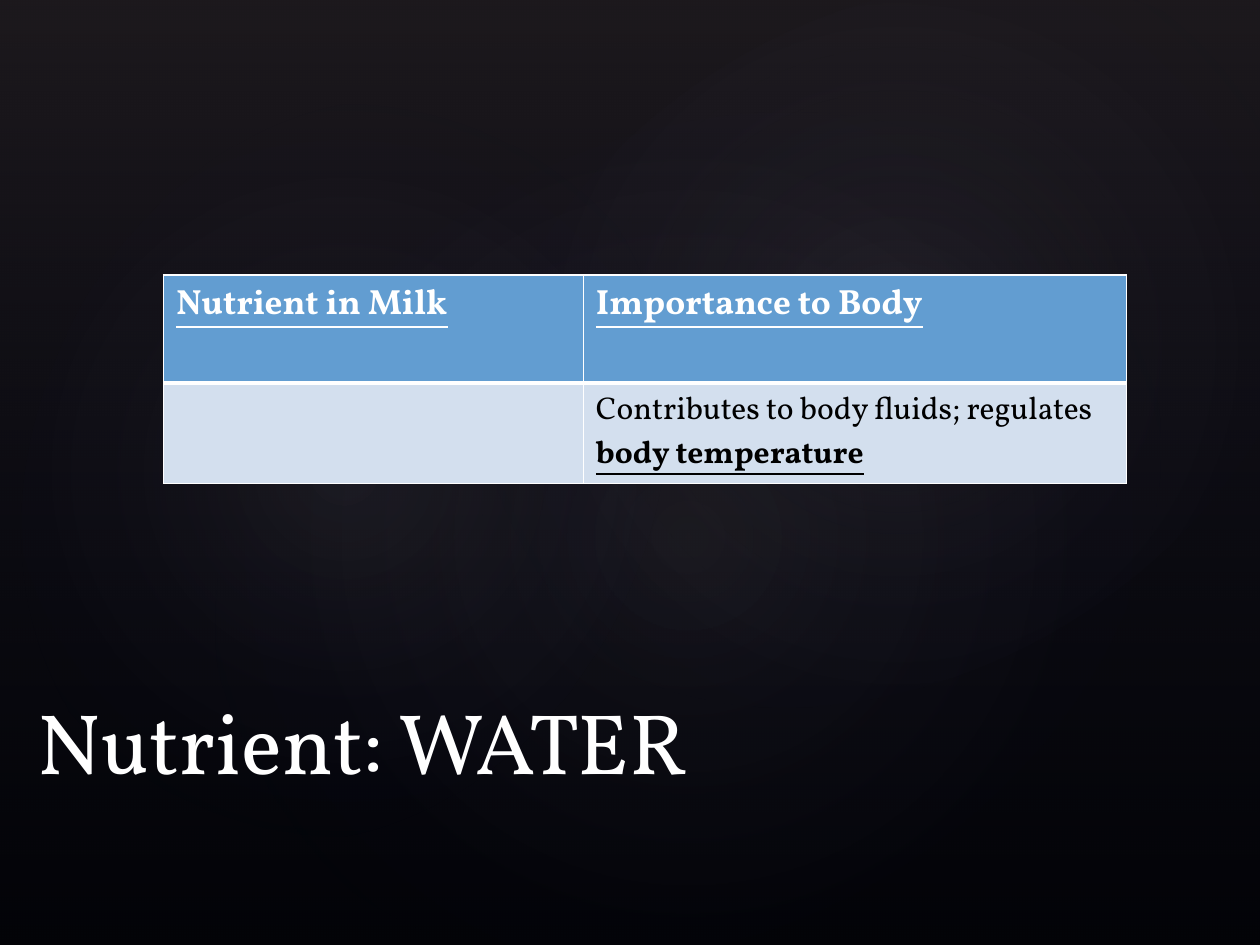
from lxml import etree
from pptx import Presentation
from pptx.dml.color import RGBColor
from pptx.enum.shapes import MSO_SHAPE
from pptx.enum.text import MSO_ANCHOR, MSO_AUTO_SIZE, PP_ALIGN
from pptx.oxml.ns import qn
from pptx.util import Cm, Pt

RECT, OVAL = MSO_SHAPE.RECTANGLE, MSO_SHAPE.OVAL
LEFT, BOTTOM, NO_FIT = PP_ALIGN.LEFT, MSO_ANCHOR.BOTTOM, MSO_AUTO_SIZE.NONE
FONT = "Vollkorn"
BLACK = RGBColor(0x00, 0x00, 0x00)
WHITE = RGBColor(0xFF, 0xFF, 0xFF)
BLUE = RGBColor(0x62, 0x9D, 0xD1)
PALE = RGBColor(0xD3, 0xDF, 0xEE)
NAVY = RGBColor(0x24, 0x28, 0x52)
PLUM = RGBColor(0x50, 0x46, 0x52)
MIST = RGBColor(0xC4, 0xBC, 0xC6)


def add_node(parent, tag, **attrs):
    return etree.SubElement(parent, qn(tag), {k: str(v) for k, v in attrs.items()})


def add_run(para, text, size, color, bold=False, line=False):
    run = para.add_run()
    run.text = text
    font = run.font
    font.name, font.size = FONT, Pt(size)
    font.bold, font.underline = bold, line
    font.color.rgb = color


def add_glow(slide, kind, box, stops, turn=0):
    """Add a see-through gradient; stops are (place %, colour, opacity %)."""
    shape = slide.shapes.add_shape(kind, *[Cm(v) for v in box])
    shape.shadow.inherit = False
    shape.rotation = turn
    shape.line.fill.background()
    shape.fill.gradient()
    grad = shape.fill._xPr.find(qn("a:gradFill"))
    for child in list(grad):
        grad.remove(child)
    grad.set("rotWithShape", "1")
    steps = add_node(grad, "a:gsLst")
    for place, color, alpha in stops:
        stop = add_node(steps, "a:gs", pos=place * 1000)
        tint = add_node(stop, "a:srgbClr", val=color)
        add_node(tint, "a:alpha", val=alpha * 1000)
    if kind == OVAL:
        ring = add_node(grad, "a:path", path="circle")
        add_node(ring, "a:fillToRect", l=50000, t=50000, r=50000, b=50000)
    else:
        add_node(grad, "a:lin", ang=5400000, scaled=0)


def add_backdrop(slide, wide, high):
    fill = slide.background.fill
    fill.solid()
    fill.fore_color.rgb = BLACK
    add_glow(slide, RECT, (0, 0, wide, high), [(0, PLUM, 36), (100, NAVY, 10)])
    # Soft round lights: box, turn, opacity
    lights = [
        ((3.81, 2.9, 20.12, 15.85), 328.7, 7),
        ((-0.76, 3.25, 15.39, 12.45), 294.3, 8),
        ((9.09, 0.33, 18.01, 13.21), 328.7, 8),
    ]
    for box, turn, alpha in lights:
        add_glow(slide, OVAL, box, [(0, MIST, alpha), (58, NAVY, 0)], turn)


def set_title(slide, text, box):
    title = slide.shapes.title
    title.left, title.top, title.width, title.height = [Cm(v) for v in box]
    frame = title.text_frame
    frame.auto_size, frame.vertical_anchor = NO_FIT, BOTTOM
    para = frame.paragraphs[0]
    para.alignment = LEFT
    add_run(para, text, 49, WHITE)
    # Bring the title in front of the backdrop
    slide.shapes._spTree.append(title._element)


def style_cell(cell, fill, base):
    props = cell._tc.get_or_add_tcPr()
    for side, width in (("L", 1), ("R", 1), ("T", 1), ("B", base)):
        line = add_node(props, "a:ln" + side, w=Pt(width))
        add_node(add_node(line, "a:solidFill"), "a:srgbClr", val=WHITE)
    cell.fill.solid()
    cell.fill.fore_color.rgb = fill


def add_grid(slide, box, cols, rows):
    table = slide.shapes.add_table(2, 2, *[Cm(v) for v in box]).table
    for col, width in zip(table.columns, cols):
        col.width = Cm(width)
    for row, height in zip(table.rows, rows):
        row.height = Cm(height)
    # Header row
    for cell, text in zip(table.rows[0].cells, ("Nutrient in Milk", "Importance to Body")):
        style_cell(cell, BLUE, 3)
        add_run(cell.text_frame.paragraphs[0], text, 20, WHITE, True, True)
    # Body row
    for cell in table.rows[1].cells:
        style_cell(cell, PALE, 1)
    frame = table.cell(1, 1).text_frame
    add_run(frame.paragraphs[0], "Contributes to body fluids; regulates", 18, BLACK)
    add_run(frame.add_paragraph(), "body temperature", 18, BLACK, True, True)


def main():
    deck = Presentation()
    wide, high = 25.4, 19.05
    deck.slide_width, deck.slide_height = Cm(wide), Cm(high)
    slide = deck.slides.add_slide(deck.slide_layouts[5])
    add_backdrop(slide, wide, high)
    set_title(slide, "Nutrient: WATER", (0.51, 13.54, 23.39, 2.54))
    add_grid(slide, (3.3, 5.54, 19.41, 3.96), (8.46, 10.95), (2.18, 1.78))
    deck.save("out.pptx")


if __name__ == "__main__":
    main()
